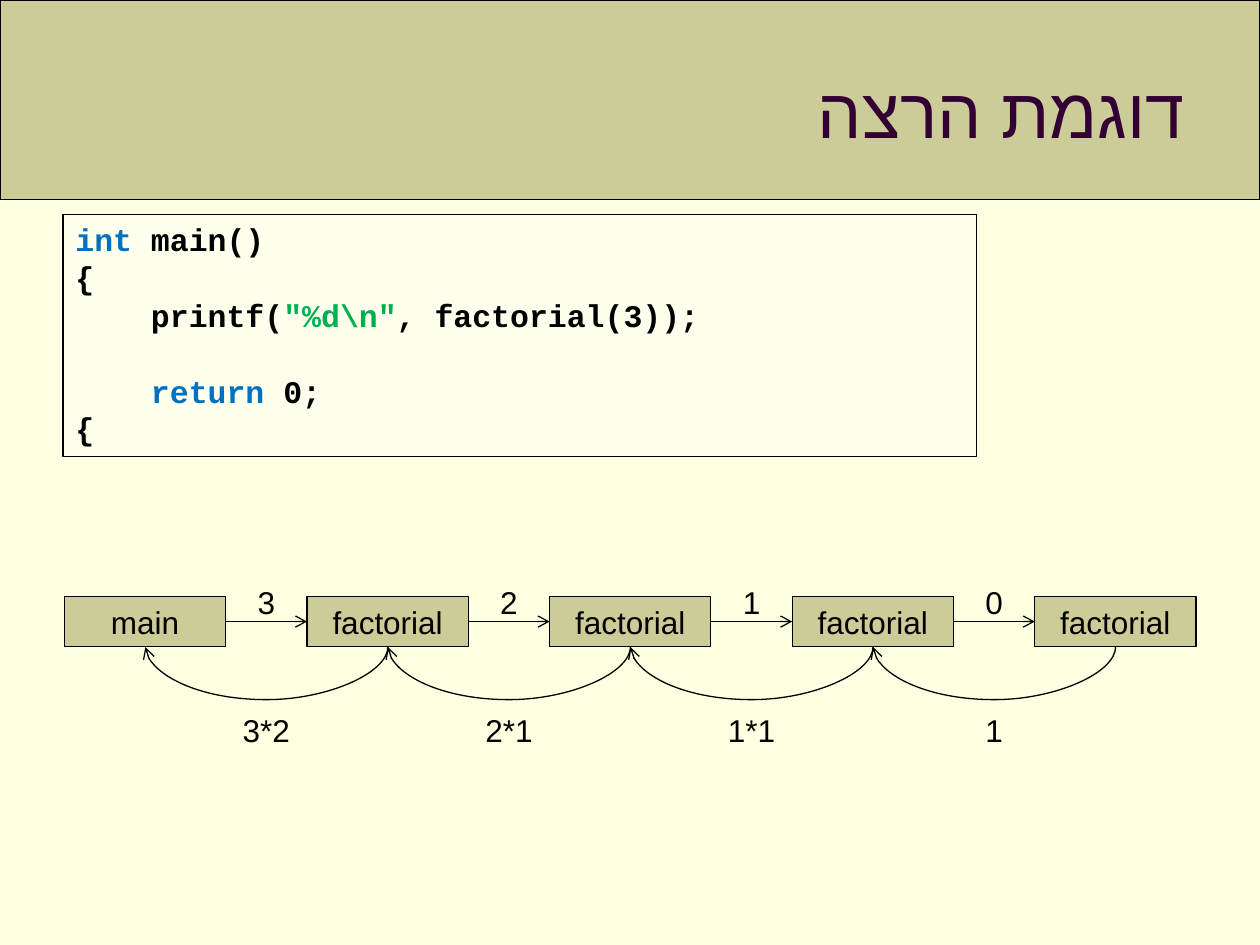
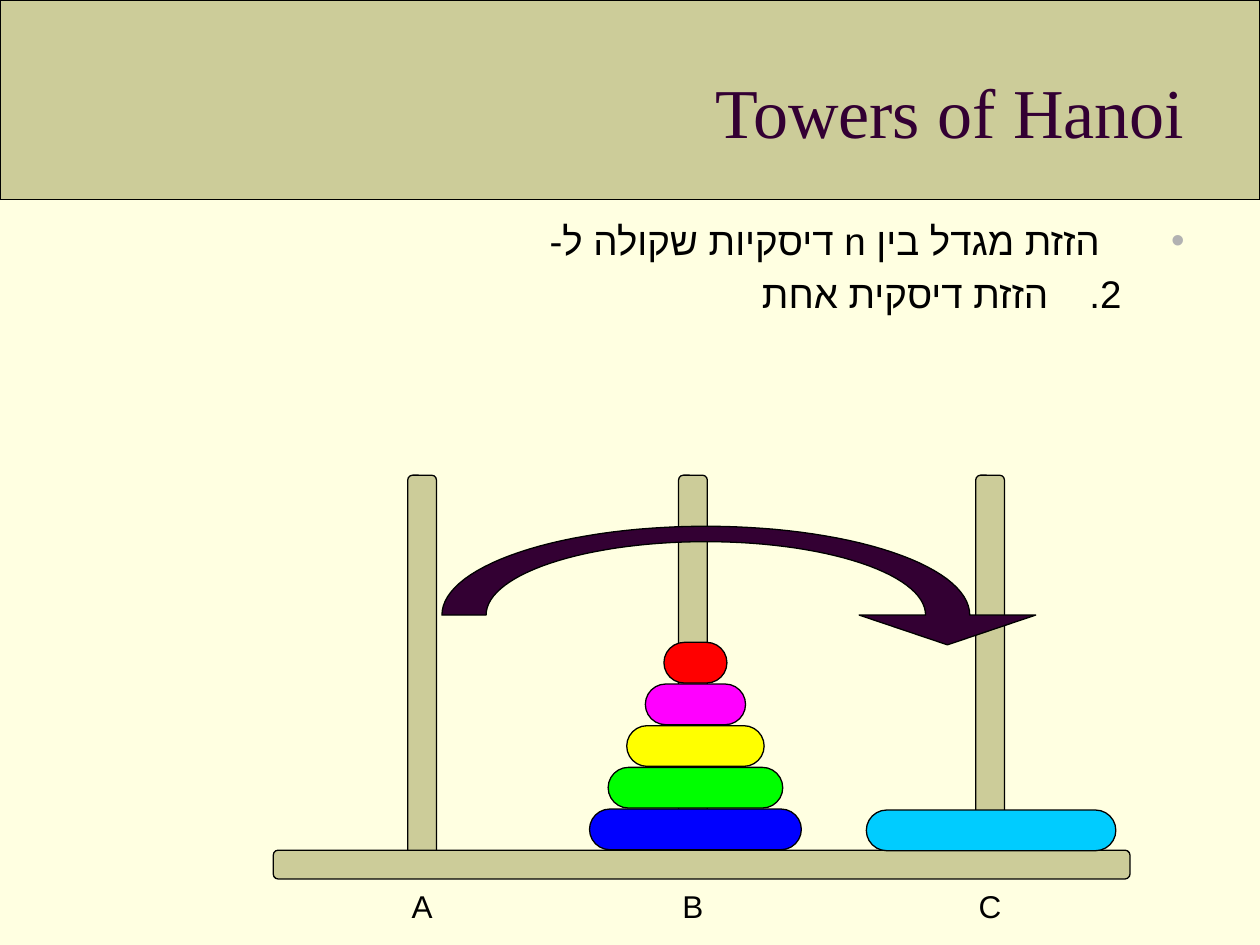
"""Build two slides on recursion: a factorial call chain and the Towers of Hanoi."""
import math

from lxml import etree
from pptx import Presentation
from pptx import util as u
from pptx.dml.color import RGBColor
from pptx.enum import shapes, text
from pptx.oxml import ns

Cm, Pt = u.Cm, u.Pt
SHAPE = shapes.MSO_SHAPE
CONNECTOR = shapes.MSO_CONNECTOR
ALIGN = text.PP_ALIGN

CREAM = RGBColor(0xFF, 0xFF, 0xE1)
KHAKI = RGBColor(0xCC, 0xCC, 0x99)
IVORY = RGBColor(0xFF, 0xFF, 0xEE)
PLUM = RGBColor(0x33, 0x00, 0x33)
BLACK = RGBColor(0, 0, 0)
GREY = RGBColor(0xB2, 0xB2, 0xB2)
KEYWORD = RGBColor(0x00, 0x70, 0xC0)
STRING = RGBColor(0x00, 0xB0, 0x50)
SKY = RGBColor(0x00, 0xCC, 0xFF)
DISK_COLOURS = [RGBColor(0, 0, 0xFF), RGBColor(0, 0xFF, 0), RGBColor(0xFF, 0xFF, 0),
                RGBColor(0xFF, 0, 0xFF), RGBColor(0xFF, 0, 0)]

CODE = [
    [("int", KEYWORD), (" main()", BLACK)],
    [("{", BLACK)],
    [("    printf(", BLACK), ('"%d\\n"', STRING), (", factorial(3));", BLACK)],
    [],
    [("    ", BLACK), ("return ", KEYWORD), ("0;", BLACK)],
    [("{", BLACK)],
]
CALLS = ["main", "factorial", "factorial", "factorial", "factorial"]
ARGUMENTS = ["3", "2", "1", "0"]
RESULTS = ["3*2", "2*1", "1*1", "1"]
PEGS = {"A": 8.51, "B": 13.97, "C": 19.96}


def add_xml(parent, tag, **attributes):
    """Append a DrawingML element and return it."""
    return etree.SubElement(parent, ns.qn(tag), attributes)


def style_run(run, size, colour, font="Arial", bold=None):
    """Format one run, giving Hebrew letters Arial."""
    run.font.size = Pt(size)
    run.font.name = font
    run.font.bold = bold
    run.font.color.rgb = colour
    add_xml(run._r.get_or_add_rPr(), "a:cs", typeface="Arial")


def place(item, left, top, width, height):
    """Position an element, in centimetres."""
    item.left, item.top = Cm(left), Cm(top)
    item.width, item.height = Cm(width), Cm(height)


def paint(shape, fill):
    """Give a shape a plain fill and a thin black outline."""
    shape.shadow.inherit = False
    shape.fill.solid()
    shape.fill.fore_color.rgb = fill
    shape.line.color.rgb = BLACK
    shape.line.width = Pt(0.75)
    return shape


def add_block(parent, kind, left, top, width, height, fill, corner=None):
    """Add a painted preset shape, in centimetres."""
    block = parent.add_shape(kind, Cm(left), Cm(top), Cm(width), Cm(height))
    if corner is not None:
        block.adjustments[0] = corner
    return paint(block, fill)


def write_centred(shape, words):
    """Write one centred 18 pt line in a shape."""
    shape.text_frame.text = words
    line = shape.text_frame.paragraphs[0]
    line.alignment = ALIGN.CENTER
    style_run(line.runs[0], 18, BLACK)


def add_label(slide, words, centre, top, width=1.55):
    """Add a centred text label around a horizontal centre."""
    label = slide.shapes.add_textbox(Cm(centre - width / 2), Cm(top), Cm(width), Cm(1.02))
    label.text_frame.word_wrap = True
    write_centred(label, words)


def set_rtl(paragraph):
    """Make a paragraph right-to-left and aligned to the right."""
    paragraph.alignment = ALIGN.RIGHT
    properties = paragraph._p.get_or_add_pPr()
    properties.set("rtl", "1")
    return properties


def add_titled_slide(prs, layout, words):
    """Add a slide with the shared title style."""
    slide = prs.slides.add_slide(prs.slide_layouts[layout])
    title = slide.shapes.title
    place(title, 1.27, 0.64, 22.86, 3.17)
    title.text_frame.text = words
    title.text_frame.auto_size = text.MSO_AUTO_SIZE.NONE
    title.text_frame.vertical_anchor = text.MSO_ANCHOR.MIDDLE
    line = title.text_frame.paragraphs[0]
    set_rtl(line)
    style_run(line.runs[0], 40, PLUM, "Times New Roman")
    return slide


def dress_master(prs, slide):
    """Put the background and the title band on the slide master."""
    master = prs.slide_master
    master.background.fill.solid()
    master.background.fill.fore_color.rgb = CREAM
    band = add_block(slide.shapes, SHAPE.RECTANGLE, 0, 0, 25.4, 4.02, KHAKI)
    master.shapes._spTree.insert(2, band._element)


def add_code(slide):
    """Add the framed program listing."""
    frame = add_block(slide.shapes, SHAPE.RECTANGLE, 1.27, 4.32, 18.42, 4.88, IVORY)
    listing = frame.text_frame
    listing.vertical_anchor = text.MSO_ANCHOR.TOP
    listing.text = "\n".join("".join(part for part, _ in line) for line in CODE)
    for paragraph, line in zip(listing.paragraphs, CODE):
        paragraph.text = ""
        paragraph.alignment = ALIGN.LEFT
        paragraph.line_spacing = Pt(21.6)
        for part, colour in line:
            run = paragraph.add_run()
            run.text = part
            style_run(run, 18, colour, "Courier New", True)


def add_arrow(slide, kind, source, source_side, target, target_side):
    """Join two boxes with a thin arrow."""
    arrow = slide.shapes.add_connector(kind, 0, 0, 0, 0)
    arrow.begin_connect(source, source_side)
    arrow.end_connect(target, target_side)
    arrow.line.color.rgb = BLACK
    arrow.line.width = Pt(0.75)
    add_xml(arrow.line._get_or_add_ln(), "a:tailEnd", type="arrow")
    add_xml(arrow._element.spPr, "a:effectLst")
    return arrow


def add_return_arc(slide, source, target, middle, bottom, step):
    """Curve an arrow below the boxes, from a call back to its caller."""
    thickness, depth = 0.01, 1.07
    arc = add_arrow(slide, CONNECTOR.CURVE, source, 2, target, 2)
    place(arc, middle, bottom - step / 2, thickness, step)
    properties = arc._element.spPr
    transform = properties.find(ns.qn("a:xfrm"))
    transform.attrib.pop("flipH", None)
    transform.attrib.pop("flipV", None)
    transform.set("rot", "5400000")
    guides = properties.find(ns.qn("a:prstGeom")).get_or_add_avLst()
    add_xml(guides, "a:gd", name="adj1", fmla=f"val {round(depth / thickness * 100000)}")


def add_call_chain(slide):
    """Draw the calls with their arguments and returned values."""
    left, top, width, height, step = 1.3, 12.02, 3.25, 1.02, 4.89
    boxes = []
    for i, name in enumerate(CALLS):
        box = add_block(slide.shapes, SHAPE.RECTANGLE, left + i * step, top, width, height, KHAKI)
        write_centred(box, name)
        boxes.append(box)
    for i, (argument, result) in enumerate(zip(ARGUMENTS, RESULTS)):
        caller, callee = boxes[i:i + 2]
        middle = left + (width + step) / 2 + i * step
        add_arrow(slide, CONNECTOR.STRAIGHT, caller, 3, callee, 1)
        add_return_arc(slide, callee, caller, middle, top + height, step)
        add_label(slide, argument, middle, 11.63)
        add_label(slide, result, middle, 14.2)


def add_steps(slide):
    """Fill the body with the bullet and the numbered step."""
    body = slide.placeholders[1]
    place(body, 1.27, 4.24, 22.86, 13.54)
    body.text_frame.text = "הזזת מגדל בין n דיסקיות שקולה ל-\nהזזת דיסקית אחת"
    body.text_frame.auto_size = text.MSO_AUTO_SIZE.NONE
    bullet, step = body.text_frame.paragraphs
    bullet.space_before = Pt(0)
    step.level = 1
    markers = [(bullet, 1.7, 1.7, GREY, "a:buChar", {"char": "•"}),
               (step, 2.74, 1.47, BLACK, "a:buAutoNum", {"type": "arabicPeriod", "startAt": "2"})]
    for paragraph, margin, hanging, colour, tag, marker in markers:
        properties = set_rtl(paragraph)
        properties.set("marL", str(Cm(margin)))
        properties.set("indent", str(-Cm(hanging)))
        add_xml(add_xml(properties, "a:buClr"), "a:srgbClr", val=str(colour))
        add_xml(properties, "a:buFont", typeface="Arial")
        add_xml(properties, tag, **marker)
        style_run(paragraph.runs[0], 22, BLACK)


def add_disk(parent, centre, top, width, colour):
    """Add one disk around a horizontal centre."""
    add_block(parent, SHAPE.ROUNDED_RECTANGLE, centre - width / 2, top, width, 0.82, colour, 0.5)


def add_towers(slide):
    """Draw pegs, base, disks and peg letters."""
    for letter, centre in PEGS.items():
        add_block(slide.shapes, SHAPE.ROUNDED_RECTANGLE, centre - 0.29, 9.58, 0.58, 7.92, KHAKI, 0.17)
        add_label(slide, letter, centre, 17.75, 1.93)
    add_block(slide.shapes, SHAPE.ROUNDED_RECTANGLE, 5.51, 17.14, 17.27, 0.58, KHAKI, 0.17)
    add_disk(slide.shapes, PEGS["C"] + 0.02, 16.33, 5.03, SKY)
    tower = slide.shapes.add_group_shape().shapes
    for i, colour in enumerate(DISK_COLOURS):
        add_disk(tower, PEGS["B"] + 0.05, 16.31 - 0.84 * i, 4.27 - 0.75 * i, colour)


def half_ellipse(centre, base, radius_x, radius_y, steps=60):
    """List the points of an upper half ellipse from left to right."""
    angles = [math.pi * (1 - i / steps) for i in range(steps + 1)]
    return [(Cm(centre + radius_x * math.cos(a)), Cm(base - radius_y * math.sin(a))) for a in angles]


def add_move_arrow(slide):
    """Draw the arched arrow from peg A to peg C."""
    centre, base = 14.23, 12.4
    outer = half_ellipse(centre, base, 5.32, 1.79)
    inner = half_ellipse(centre, base, 4.43, 1.48)
    head = [(Cm(x), Cm(y)) for x, y in [(20.88, base), (19.1, 13), (17.32, base)]]
    outline = outer + head + inner[::-1]
    builder = slide.shapes.build_freeform(*outline[0])
    builder.add_line_segments(outline[1:], close=True)
    paint(builder.convert_to_shape(), PLUM)


def main():
    """Build and save the slides."""
    prs = Presentation()
    prs.slide_width, prs.slide_height = Cm(25.4), Cm(19.05)

    run_example = add_titled_slide(prs, 5, "דוגמת הרצה")
    dress_master(prs, run_example)
    add_code(run_example)
    add_call_chain(run_example)

    hanoi = add_titled_slide(prs, 1, "Towers of Hanoi")
    add_steps(hanoi)
    add_towers(hanoi)
    add_move_arrow(hanoi)

    prs.save("out.pptx")


if __name__ == "__main__":
    main()
